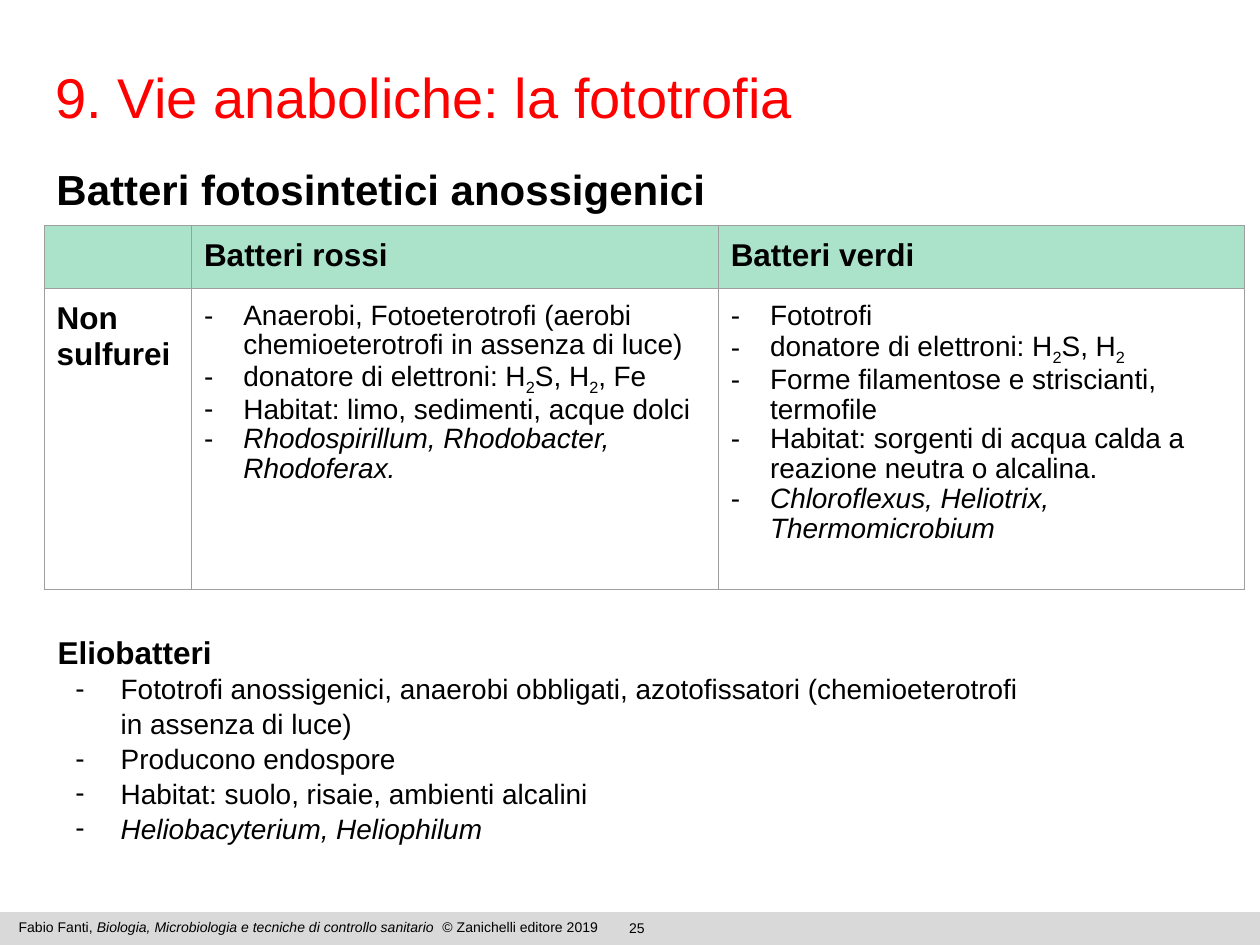
from lxml import etree
from pptx import Presentation
from pptx.dml.color import RGBColor
from pptx.enum.shapes import MSO_SHAPE
from pptx.enum.text import MSO_ANCHOR, PP_ALIGN
from pptx.oxml.ns import qn
from pptx.util import Pt

RECT = MSO_SHAPE.RECTANGLE
TOP = MSO_ANCHOR.TOP
LEFT, CENTER = PP_ALIGN.LEFT, PP_ALIGN.CENTER
BLACK = RGBColor(0x00, 0x00, 0x00)
WHITE = RGBColor(0xFF, 0xFF, 0xFF)
RED = RGBColor(0xFF, 0x00, 0x00)
GREEN = RGBColor(0xAA, 0xE2, 0xCA)
GREY = RGBColor(0xD9, 0xD9, 0xD9)
BORDER = RGBColor(0x9E, 0x9E, 0x9E)

SMALL = {"size": Pt(8)}
BODY = {"size": Pt(16)}
LATIN = {"size": Pt(16), "italic": True}
HEAD = {"size": Pt(18), "bold": True}

RED_BACTERIA = [
    ("Anaerobi, Fotoeterotrofi (aerobi chemioeterotrofi in assenza di luce)", BODY),
    ("donatore di elettroni: H_2S, H_2, Fe", BODY),
    ("Habitat: limo, sedimenti, acque dolci", BODY),
    ("Rhodospirillum, Rhodobacter, Rhodoferax.", LATIN),
]
GREEN_BACTERIA = [
    ("Fototrofi", BODY),
    ("donatore di elettroni: H_2S, H_2", BODY),
    ("Forme filamentose e striscianti, termofile", BODY),
    ("Habitat: sorgenti di acqua calda a reazione neutra o alcalina.", BODY),
    ("Chloroflexus, Heliotrix, Thermomicrobium", LATIN),
]
HELIOBACTERIA = [
    ("Fototrofi anossigenici, anaerobi obbligati, azotofissatori "
     "(chemioeterotrofi in assenza di luce)", BODY),
    ("Producono endospore", BODY),
    ("Habitat: suolo, risaie, ambienti alcalini", BODY),
    ("Heliobacyterium, Heliophilum", LATIN),
]


def add_run(p, text, fmt, subscript=False):
    """Add one run with the given font values."""
    r = p.add_run()
    r.text = text
    for name, value in {"name": "Arial", **fmt}.items():
        setattr(r.font, name, value)
    r.font.color.rgb = fmt_color(fmt)
    if subscript:
        r._r.get_or_add_rPr().set("baseline", "-25000")


def fmt_color(fmt):
    """Return red for the title size and black for all other text."""
    return RED if fmt["size"] == Pt(32) else BLACK


def add_formula(p, text, fmt):
    """Add text in which the character after an underscore is a subscript."""
    first, *rest = text.split("_")
    add_run(p, first, fmt)
    for part in rest:
        add_run(p, part[0], fmt, subscript=True)
        if part[1:]:
            add_run(p, part[1:], fmt)


def set_dash(p, indent):
    """Give a paragraph a hanging dash."""
    pPr = p._p.get_or_add_pPr()
    pPr.set("marL", str(Pt(indent)))
    pPr.set("indent", str(-Pt(25.9)))
    color = etree.SubElement(pPr, qn("a:buClr"))
    etree.SubElement(color, qn("a:srgbClr")).set("val", str(BLACK))
    etree.SubElement(pPr, qn("a:buFont")).set("typeface", "Arial")
    etree.SubElement(pPr, qn("a:buChar")).set("char", "-")


def fill_text(tf, lines, indent=None, spacing=None, align=LEFT):
    """Write one paragraph for each line, dashed where the line is body text."""
    for i, (text, fmt) in enumerate(lines):
        p = tf.add_paragraph() if i else tf.paragraphs[0]
        p.alignment = align
        if spacing:
            p.line_spacing = spacing
        if indent and fmt is not HEAD:
            set_dash(p, indent)
        add_formula(p, text, fmt)


def set_frame(tf, inset_x, inset_y):
    """Wrap a text frame, anchor it at the top and set its insets."""
    values = {
        "word_wrap": True, "vertical_anchor": TOP,
        "margin_left": Pt(inset_x), "margin_right": Pt(inset_x),
        "margin_top": Pt(inset_y), "margin_bottom": Pt(inset_y),
    }
    for name, value in values.items():
        setattr(tf, name, value)


def add_rect(s, box, fill):
    """Add a plain filled rectangle."""
    sp = s.shapes.add_shape(RECT, *map(Pt, box))
    sp.shadow.inherit = False
    sp.fill.solid()
    sp.fill.fore_color.rgb = fill
    sp.line.fill.background()
    return sp


def add_text(s, box, lines, inset_y=7.2, **layout):
    """Add a text box."""
    tf = s.shapes.add_textbox(*map(Pt, box)).text_frame
    set_frame(tf, 7.2, inset_y)
    fill_text(tf, lines, **layout)


def add_footer(s, box):
    """Add the grey band with the credit and the page number."""
    x, y, w, h = box
    add_rect(s, box, GREY)
    add_text(s, (x + 283.7, y + 0.7, 160.6, 12.2), [("25", SMALL)], 3.6, align=CENTER)
    tf = s.shapes.add_textbox(Pt(x + 3.6), Pt(y), Pt(362.9), Pt(17.3)).text_frame
    set_frame(tf, 7.2, 3.6)
    p = tf.paragraphs[0]
    add_run(p, "Fabio Fanti, ", SMALL)
    add_run(p, "Biologia, Microbiologia e tecniche di controllo sanitario",
            {**SMALL, "italic": True})
    add_run(p, "  © Zanichelli editore 2019", SMALL)


def add_title(s, box):
    """Add the white title bar."""
    sp = add_rect(s, box, WHITE)
    sp.line.color.rgb = WHITE
    sp.line.width = Pt(0.75)
    set_frame(sp.text_frame, 6.5, 5.5)
    fill_text(sp.text_frame, [("9. Vie anaboliche: la fototrofia", {"size": Pt(32)})])


def set_borders(cell):
    """Draw a thin line on all four sides of a cell."""
    tcPr = cell._tc.get_or_add_tcPr()
    for side in ("a:lnL", "a:lnR", "a:lnT", "a:lnB"):
        ln = etree.SubElement(tcPr, qn(side), w=str(Pt(0.75)))
        fill = etree.SubElement(ln, qn("a:solidFill"))
        etree.SubElement(fill, qn("a:srgbClr")).set("val", str(BORDER))


def add_bacteria_table(s, box):
    """Add the table that compares red and green bacteria."""
    x, y, w, h = box
    label_w, head_h = 84.2, 34.3
    rows = [
        [[], [("Batteri rossi", HEAD)], [("Batteri verdi", HEAD)]],
        [[("Non sulfurei", HEAD)], RED_BACTERIA, GREEN_BACTERIA],
    ]
    table = s.shapes.add_table(2, 3, *map(Pt, box)).table
    for column, width in zip(table.columns, (label_w, *[(w - label_w) / 2] * 2)):
        column.width = Pt(width)
    for row, height in zip(table.rows, (head_h, h - head_h)):
        row.height = Pt(height)
    for i, row in enumerate(rows):
        for j, lines in enumerate(row):
            cell = table.cell(i, j)
            for side in ("left", "right", "top", "bottom"):
                setattr(cell, f"margin_{side}", Pt(7.2))
            set_borders(cell)
            if i:
                cell.fill.background()
            else:
                cell.fill.solid()
                cell.fill.fore_color.rgb = GREEN
            spacing = 0.96 if i and j else None
            fill_text(cell.text_frame, lines, indent=22.5, spacing=spacing)


def main():
    """Build the slide and save it."""
    prs = Presentation()
    prs.slide_width, prs.slide_height = Pt(720), Pt(540)
    s = prs.slides.add_slide(prs.slide_layouts[6])
    add_footer(s, (0, 521.3, 720, 18.7))
    add_title(s, (25.2, 30.2, 694.8, 69.8))
    add_text(s, (25.2, 82.1, 679, 46.8),
             [("Batteri fotosintetici anossigenici", {"size": Pt(24), "bold": True})],
             spacing=1.15)
    add_bacteria_table(s, (25.2, 128.9, 686.2, 206.4))
    add_text(s, (25.9, 353.5, 578.2, 149), [("Eliobatteri", HEAD), *HELIOBACTERIA],
             indent=36, spacing=1.04)
    prs.save("out.pptx")


if __name__ == "__main__":
    main()
